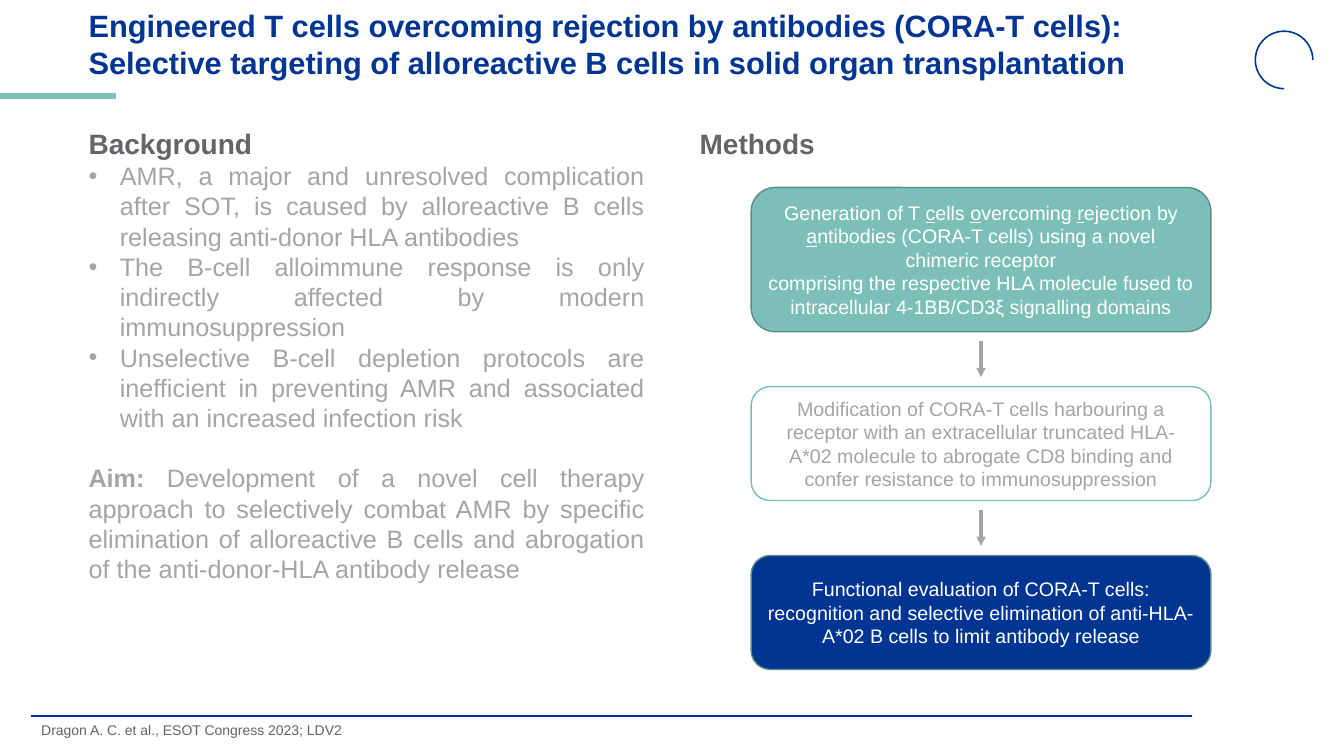
from dataclasses import dataclass
from lxml.etree import SubElement
from pptx import Presentation
from pptx.dml.color import RGBColor
from pptx.enum.shapes import MSO_CONNECTOR, MSO_SHAPE
from pptx.enum.text import MSO_ANCHOR, PP_ALIGN
from pptx.oxml.ns import qn
from pptx.util import Inches, Pt


@dataclass(frozen=True)
class Theme:
    font: str = "Arial"
    navy: str = "003594"
    teal: str = "7CBFB6"
    edge: str = "5C8D87"
    dark: str = "636569"
    grey: str = "A5A5A5"
    white: str = "FFFFFF"
    title: int = 22
    head: int = 20
    body: int = 18
    step: int = 14
    note: int = 10


THEME = Theme()
WIDTH, HEIGHT = Inches(13.33), Inches(7.5)

# Columns and rows are percent of the slide's width and height
LEFT, EDGE, TOP = 5.85, 2.33, 16.13
STEP_X, STEP_W, STEP_Y = 55.89, 34.21, 24.8
GAP, PAD = 7.27, 1.25

POINTS = [
    "AMR, a major and unresolved complication after SOT, is caused by "
    "alloreactive B cells releasing anti-donor HLA antibodies",
    "The B-cell alloimmune response is only indirectly affected by modern "
    "immunosuppression",
    "Unselective B-cell depletion protocols are inefficient in preventing AMR "
    "and associated with an increased infection risk",
]
AIM = ("_Aim: _Development of a novel cell therapy approach to selectively "
       "combat AMR by specific elimination of alloreactive B cells and "
       "abrogation of the anti-donor-HLA antibody release")

# Height, fill, line, text colour, paragraphs; underscores mark underlined letters
STEPS = [
    (19.07, THEME.teal, THEME.edge, THEME.white, [
        "Generation of T _c_ells _o_vercoming _r_ejection by _a_ntibodies "
        "(CORA-T cells) using a novel chimeric receptor",
        "comprising the respective HLA molecule fused to intracellular "
        "4-1BB/CD3ξ signalling domains"]),
    (15.07, None, THEME.teal, THEME.grey, [
        "Modification of CORA-T cells harbouring a receptor with an "
        "extracellular truncated HLA-A*02 molecule to abrogate CD8 binding "
        "and confer resistance to immunosuppression"]),
    (15.07, THEME.navy, THEME.edge, THEME.white, [
        "Functional evaluation of CORA-T cells: recognition and selective "
        "elimination of anti-HLA-A*02 B cells to limit antibody release"]),
]


def across(share):
    return int(WIDTH * share / 100)


def down(share):
    return int(HEIGHT * share / 100)


def place(x, y, w, h):
    return across(x), down(y), across(w), down(h)


def paint(fmt, color):
    fmt.solid()
    fmt.fore_color.rgb = RGBColor.from_string(color)


def write(para, text, size, color, bold=False, mark=None):
    """Fill a paragraph; parts between underscores get the font flag in mark."""
    for i, part in enumerate(text.split("_")):
        if not part:
            continue
        run = para.add_run()
        run.text = part
        font = run.font
        font.name, font.size, font.bold = THEME.font, Pt(size), bold
        font.color.rgb = RGBColor.from_string(color)
        if i % 2:
            setattr(font, mark, True)


def bullet(para):
    props = para._p.get_or_add_pPr()
    props.set("marL", str(Inches(0.31)))
    props.set("indent", str(-Inches(0.31)))
    SubElement(props, qn("a:buFont"), typeface=THEME.font)
    SubElement(props, qn("a:buChar"), char="•")


def label(slide, box, text, size, color, bold=False, anchor=MSO_ANCHOR.TOP):
    frame = slide.shapes.add_textbox(*place(*box)).text_frame
    frame.word_wrap = True
    frame.vertical_anchor = anchor
    write(frame.paragraphs[0], text, size, color, bold)
    return frame


def rule(slide, start, end, color, width, arrow=False):
    line = slide.shapes.add_connector(
        MSO_CONNECTOR.STRAIGHT, across(start[0]), down(start[1]),
        across(end[0]), down(end[1]))
    paint(line.line.fill, color)
    line.line.width = Pt(width)
    if arrow:
        SubElement(line.line._get_or_add_ln(), qn("a:tailEnd"), type="triangle")
    SubElement(line._element.spPr, qn("a:effectLst"))


def shape(slide, kind, box, fill, edge, width):
    item = slide.shapes.add_shape(kind, *place(*box))
    item.shadow.inherit = False
    if fill:
        paint(item.fill, fill)
    else:
        item.fill.background()
    paint(item.line.fill, edge)
    item.line.width = Pt(width)
    return item


def frame_slide(slide):
    rule(slide, (0, 12.67), (8.63, 12.67), THEME.teal, 4.5)
    rule(slide, (EDGE, 94.67), (88.67, 94.67), THEME.navy, 1.5)
    # Three-quarter ring, clockwise from the bottom to the right
    ring = shape(slide, MSO_SHAPE.ARC, (93.4, 4.13, 4.28, 7.6),
                 None, THEME.navy, 1.13)
    ring.adjustments[0], ring.adjustments[1] = 54, 0
    label(slide, (EDGE, 94.8, 58.9, 4.53),
          "Dragon A. C. et al., ESOT Congress 2023; LDV2", THEME.note, THEME.dark)
    label(slide, (LEFT, 0.4, 86.27, 10.67),
          "Engineered T cells overcoming rejection by antibodies (CORA-T cells): "
          "Selective targeting of alloreactive B cells in solid organ "
          "transplantation", THEME.title, THEME.navy, True, MSO_ANCHOR.MIDDLE)


def background(slide):
    frame = label(slide, (LEFT, TOP, 42.84, 62.4), "Background",
                  THEME.head, THEME.dark, True)
    for text in POINTS + [AIM]:
        para = frame.add_paragraph()
        para.alignment = PP_ALIGN.JUSTIFY
        if text == AIM:
            para.space_before = Pt(21.5)
        else:
            bullet(para)
        write(para, text, THEME.body, THEME.grey, mark="bold")


def methods(slide):
    label(slide, (51.31, TOP, 12.45, 5.87), "Methods",
          THEME.head, THEME.dark, True)
    y, mid = STEP_Y, STEP_X + STEP_W / 2
    for i, (high, fill, edge, color, texts) in enumerate(STEPS):
        if i:
            rule(slide, (mid, y - GAP + PAD), (mid, y - PAD),
                 THEME.grey, 2.25, arrow=True)
        item = shape(slide, MSO_SHAPE.ROUNDED_RECTANGLE,
                     (STEP_X, y, STEP_W, high), fill, edge, 1)
        frame = item.text_frame
        frame.word_wrap = True
        frame.vertical_anchor = MSO_ANCHOR.MIDDLE
        for j, text in enumerate(texts):
            para = frame.add_paragraph() if j else frame.paragraphs[0]
            para.alignment = PP_ALIGN.CENTER
            write(para, text, THEME.step, color, mark="underline")
        y += high + GAP


def main():
    deck = Presentation()
    deck.slide_width, deck.slide_height = WIDTH, HEIGHT
    slide = deck.slides.add_slide(deck.slide_layouts[6])
    frame_slide(slide)
    background(slide)
    methods(slide)
    deck.save("out.pptx")


if __name__ == "__main__":
    main()
